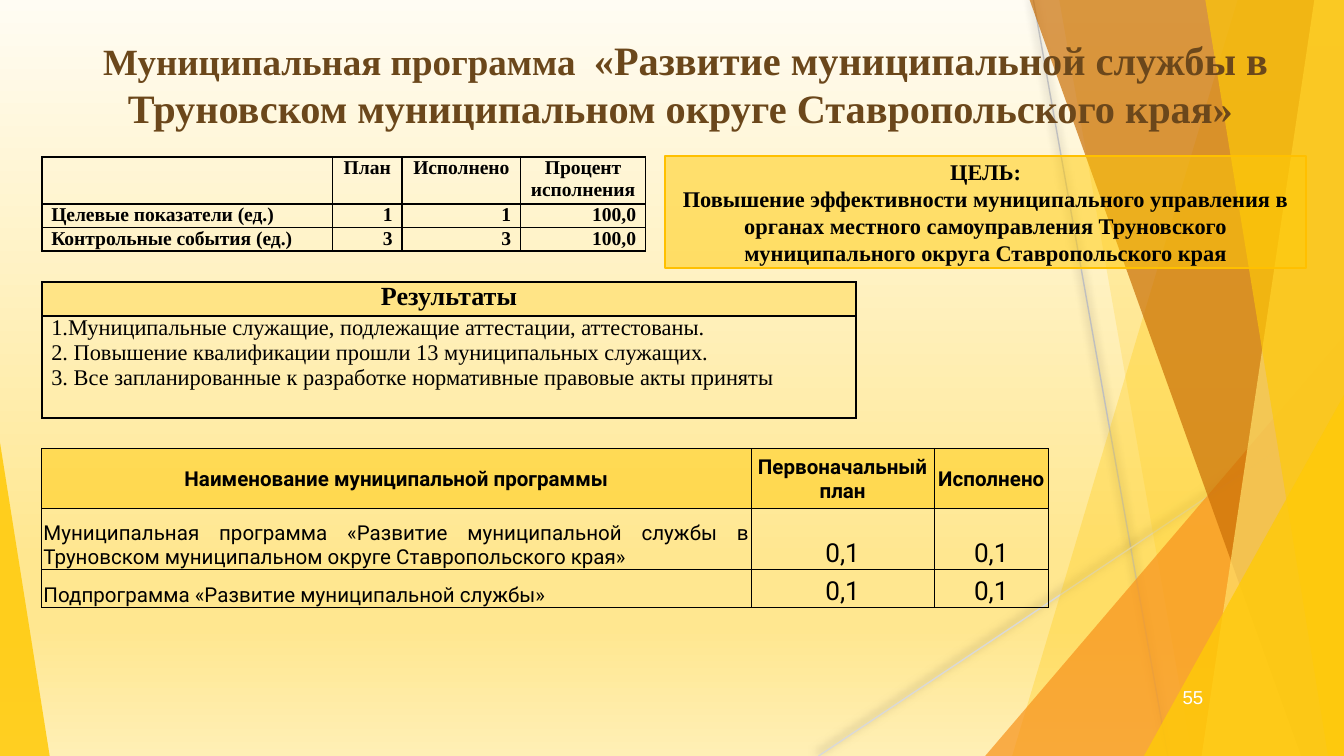
from pptx import Presentation
from pptx.dml.color import RGBColor
from pptx.enum.shapes import MSO_CONNECTOR, MSO_SHAPE
from pptx.enum.text import MSO_ANCHOR, PP_ALIGN
from pptx.oxml import parse_xml
from pptx.oxml.ns import nsdecls, qn
from pptx.util import Cm, Pt

LEFT, CENTER, RIGHT, JUSTIFY = PP_ALIGN.LEFT, PP_ALIGN.CENTER, PP_ALIGN.RIGHT, PP_ALIGN.JUSTIFY
TOP, MIDDLE, BOTTOM = MSO_ANCHOR.TOP, MSO_ANCHOR.MIDDLE, MSO_ANCHOR.BOTTOM
TRIANGLE, RECTANGLE, STRAIGHT = MSO_SHAPE.ISOSCELES_TRIANGLE, MSO_SHAPE.RECTANGLE, MSO_CONNECTOR.STRAIGHT

BLACK, WHITE = RGBColor(0, 0, 0), RGBColor(255, 255, 255)
BROWN = RGBColor(0x6B, 0x47, 0x1B)
GOLD = RGBColor(0xFF, 0xCA, 0x08)
AMBER = RGBColor(0xFF, 0xC0, 0x00)
PALE_GOLD = RGBColor(0xFF, 0xDF, 0x6B)
ORANGE = RGBColor(0xF8, 0x93, 0x1D)
RUST = RGBColor(0xCA, 0x6F, 0x06)
GRAY, LIGHT_GRAY = RGBColor(0xBF, 0xBF, 0xBF), RGBColor(0xD9, 0xD9, 0xD9)
BACKGROUND_STOPS = [
    (0, RGBColor(0xFF, 0xFC, 0xF3)), (74, RGBColor(0xFF, 0xE7, 0x90)),
    (83, RGBColor(0xFF, 0xE7, 0x90)), (100, RGBColor(0xFF, 0xEF, 0xB5)),
]
SERIF, SANS, NUMBER_FONT = "Times New Roman", "Roboto", "Arial"
WIDTH, HEIGHT = 25.4, 14.29

# Content; lengths in centimetres
TITLE = [
    ("Муниципальная программа  ", 19.8),
    ("«Развитие муниципальной службы в Труновском муниципальном округе Ставропольского края» ", 21.6),
]
GOAL = [
    "ЦЕЛЬ:",
    "Повышение эффективности муниципального управления в органах местного самоуправления "
    "Труновского муниципального округа Ставропольского края",
]
RESULTS = [
    "1.Муниципальные служащие, подлежащие аттестации, аттестованы.",
    "2. Повышение квалификации прошли 13 муниципальных служащих.",
    "3. Все запланированные к разработке нормативные правовые акты приняты",
]
PAGE_NUMBER = "55"

# Row: height, anchor, bold, fill (colour, opacity), alignments, sizes, texts
FUNDING = dict(
    at=(0.79, 8.48), columns=[13.41, 3.45, 2.17], border=0.5, insets=(0.03, 0.03, 0.03, 0), font=SANS,
    rows=[
        (1.14, MIDDLE, True, (GOLD, 50), [CENTER] * 3, [11] * 3,
         ["Наименование муниципальной программы", "Первоначальный план", "Исполнено"]),
        (1.14, BOTTOM, False, None, [JUSTIFY, CENTER, CENTER], [11, 14, 14],
         ["Муниципальная программа «Развитие муниципальной службы в Труновском "
          "муниципальном округе Ставропольского края»", "0,1", "0,1"]),
        (0.72, BOTTOM, False, None, [JUSTIFY, CENTER, CENTER], [11, 14, 14],
         ["Подпрограмма «Развитие муниципальной службы»", "0,1", "0,1"]),
    ])
INDICATOR_ALIGNMENTS, INDICATOR_SIZES = [JUSTIFY] + [RIGHT] * 3, [10.5] * 4
INDICATORS = dict(
    at=(0.79, 2.97), columns=[5.49, 1.32, 2.24, 2.36], border=1, insets=(0.18, 0, 0.18, 0), font=SERIF,
    rows=[
        (0.8, TOP, True, None, [CENTER] * 4, INDICATOR_SIZES,
         ["", "План", "Исполнено", "Процент исполнения"]),
        (0.4, TOP, True, None, INDICATOR_ALIGNMENTS, INDICATOR_SIZES,
         ["Целевые показатели (ед.)", "1", "1", "100,0"]),
        (0.4, TOP, True, None, INDICATOR_ALIGNMENTS, INDICATOR_SIZES,
         ["Контрольные события (ед.)", "3", "3", "100,0"]),
    ])
OUTCOMES = dict(
    at=(0.79, 5.33), columns=[15.39], border=1, insets=(0.18, 0, 0.18, 0), font=SERIF,
    rows=[
        (0.64, TOP, True, (PALE_GOLD, 67), [CENTER], [14], ["Результаты"]),
        (1.93, TOP, False, None, [JUSTIFY], [12], ["\n".join(RESULTS)]),
    ])

# Decoration, back to front
RAYS = [((19.53, 0), (22.07, HEIGHT), GRAY), ((WIDTH, 7.67), (15.47, HEIGHT), LIGHT_GRAY)]
# Band: left edge at the top and at the bottom; triangle: box and apex position
FACETS = [
    ("band", (23.39, 19.13), GOLD, 30),
    ("band", (20.02, 22.53), GOLD, 20),
    ("triangle", (18.62, 6.35, 6.78, 7.94, 1), ORANGE, 72),
    ("band", (19.46, 24.59), RUST, 70),
    ("band", (24.84, 22.71), PALE_GOLD, 70),
    ("band", (22.78, 25.1), GOLD, 65),
    ("triangle", (21.62, 7.47, 3.78, 6.82, 1), GOLD, 80),
    ("triangle", (0, 8.36, 0.94, 5.93, 0), GOLD, 85),
]


def fill_with(fill, color, opacity):
    fill.solid()
    fill.fore_color.rgb = color
    solid = fill._xPr.find(qn("a:solidFill"))
    solid[0].append(parse_xml(f'<a:alpha {nsdecls("a")} val="{opacity * 1000}"/>'))


def style(paragraph, align, font, size, color, bold):
    paragraph.alignment = align
    paragraph.font.name, paragraph.font.size = font, Pt(size)
    paragraph.font.color.rgb, paragraph.font.bold = color, bold


def add_grid(shapes, grid):
    rows, columns = grid["rows"], grid["columns"]
    table = shapes.add_table(len(rows), len(columns), *map(Cm, grid["at"]), Cm(sum(columns)),
                             Cm(sum(row[0] for row in rows))).table
    table.first_row = table.horz_banding = False
    for column, width in zip(table.columns, columns):
        column.width = Cm(width)
    for r, (height, anchor, bold, tint, aligns, sizes, texts) in enumerate(rows):
        table.rows[r].height = Cm(height)
        for c, (align, size, text) in enumerate(zip(aligns, sizes, texts)):
            cell = table.cell(r, c)
            cell.text = text
            cell.vertical_anchor = anchor
            cell.margin_left, cell.margin_top, cell.margin_right, cell.margin_bottom = map(Cm, grid["insets"])
            for paragraph in cell.text_frame.paragraphs:
                style(paragraph, align, grid["font"], size, BLACK, bold)
            if tint:
                fill_with(cell.fill, *tint)
            else:
                cell.fill.background()
            for i, side in enumerate("LRTB"):
                cell._tc.tcPr.insert(i, parse_xml(
                    f'<a:ln{side} {nsdecls("a")} w="{Pt(grid["border"])}"><a:solidFill>'
                    f'<a:srgbClr val="{BLACK}"/></a:solidFill></a:ln{side}>'))


prs = Presentation()
prs.slide_width, prs.slide_height = Cm(WIDTH), Cm(HEIGHT)
slide = prs.slides.add_slide(prs.slide_layouts[6])
shapes = slide.shapes

# Background
backdrop = slide.background.fill
backdrop.gradient()
backdrop.gradient_angle = 270
stops = backdrop._fill._gradFill.find(qn("a:gsLst"))
for stop in list(stops):
    stops.remove(stop)
for position, color in BACKGROUND_STOPS:
    stops.append(parse_xml(f'<a:gs {nsdecls("a")} pos="{position * 1000}"><a:srgbClr val="{color}"/></a:gs>'))

# Rays with a soft shadow
for start, end, color in RAYS:
    ray = shapes.add_connector(STRAIGHT, *map(Cm, start + end))
    ray.line.color.rgb, ray.line.width = color, Pt(0.75)
    ray._element.spPr.append(parse_xml(
        f'<a:effectLst {nsdecls("a")}><a:outerShdw blurRad="{Pt(5)}" dist="{Pt(2)}" dir="{245 * 60000}">'
        f'<a:srgbClr val="{BLACK}"><a:alpha val="50000"/></a:srgbClr></a:outerShdw></a:effectLst>'))

# Translucent facets
for kind, place, color, opacity in FACETS:
    if kind == "band":
        upper, lower = place
        outline = shapes.build_freeform(Cm(upper), 0)
        outline.add_line_segments([(Cm(x), Cm(y)) for x, y in
                                   [(WIDTH, 0), (WIDTH, HEIGHT), (lower, HEIGHT)]])
        facet = outline.convert_to_shape()
    else:
        *box, apex = place
        facet = shapes.add_shape(TRIANGLE, *map(Cm, box))
        facet.adjustments[0] = apex
    facet.shadow.inherit = False
    fill_with(facet.fill, color, opacity)
    facet.line.fill.background()

# Title
title = shapes.add_textbox(Cm(1.24), Cm(0.64), Cm(23.44), Cm(1.98)).text_frame
title.word_wrap, title.vertical_anchor = True, BOTTOM
heading = title.paragraphs[0]
style(heading, CENTER, SERIF, TITLE[-1][1], BROWN, True)
for text, size in TITLE:
    run = heading.add_run()
    run.text, run.font.size = text, Pt(size)

# Tables
for grid in (FUNDING, INDICATORS, OUTCOMES):
    add_grid(shapes, grid)

# Goal
goal = shapes.add_shape(RECTANGLE, Cm(12.57), Cm(2.95), Cm(12.12), Cm(2.11))
goal.shadow.inherit = False
fill_with(goal.fill, GOLD, 51)
goal.line.color.rgb, goal.line.width = AMBER, Pt(1)
goal.text_frame.text = "\n".join(GOAL)
goal.text_frame.word_wrap, goal.text_frame.vertical_anchor = True, MIDDLE
for paragraph in goal.text_frame.paragraphs:
    style(paragraph, CENTER, SERIF, 12, BLACK, True)

# Page number
page = shapes.add_textbox(Cm(22.1), Cm(12.8), Cm(1.42), Cm(0.76)).text_frame
page.text, page.word_wrap, page.vertical_anchor = PAGE_NUMBER, True, MIDDLE
style(page.paragraphs[0], LEFT, NUMBER_FONT, 10, WHITE, False)

prs.save("out.pptx")
